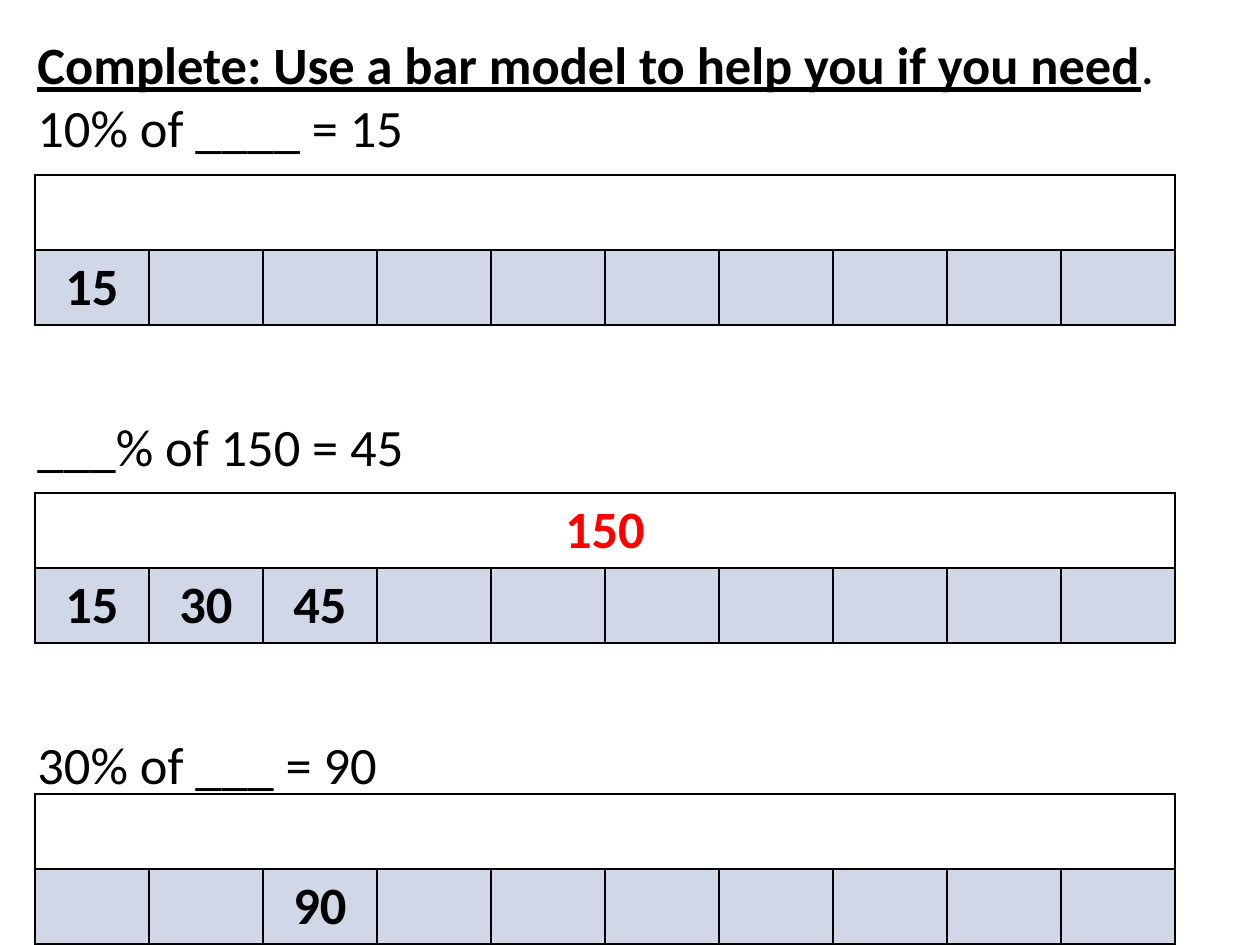
"""Build a worksheet slide of percentage questions with bar models."""
from lxml import etree
from pptx import Presentation
from pptx.dml.color import RGBColor
from pptx.enum.text import MSO_ANCHOR, PP_ALIGN
from pptx.oxml.ns import qn
from pptx.util import Emu, Pt

CENTER = PP_ALIGN.CENTER
MIDDLE = MSO_ANCHOR.MIDDLE
SCALE = 914400 / 126
PARTS = 10
COLUMN_WIDTH = 114
ROW_HEIGHT = 75
BORDER_WIDTH = Pt(1)


def px(length):
    return Emu(round(length * SCALE))


def add_run(paragraph, text, color="000000", **formats):
    run = paragraph.add_run()
    run.text = text
    run.font.color.rgb = RGBColor.from_string(color)
    for name, value in {"name": "Calibri", "size": Pt(30), **formats}.items():
        setattr(run.font, name, value)


presentation = Presentation()
presentation.slide_width = px(1260)
presentation.slide_height = px(945)
slide = presentation.slides.add_slide(presentation.slide_layouts[6])

questions = slide.shapes.add_textbox(px(25), px(26), px(1201), px(839))
text_frame = questions.text_frame
text_frame.word_wrap = True
heading = text_frame.paragraphs[0]
add_run(heading, "Complete: Use a bar model to help you if you need", bold=True, underline=True)
add_run(heading, ".")
for question, gap in (("10% of ____ = 15", 0), ("___% of 150 = 45", 146), ("30% of ___ = 90", 146)):
    paragraph = text_frame.add_paragraph()
    paragraph.space_before = Pt(gap)
    add_run(paragraph, question)

bar_models = [
    (175, "", ["15"]),
    (493, "150", ["15", "30", "45"]),
    (794, "", ["", "", "90"]),
]
for top, whole, parts in bar_models:
    frame = slide.shapes.add_table(
        2, PARTS, px(35), px(top), px(PARTS * COLUMN_WIDTH), px(2 * ROW_HEIGHT)
    )
    table = frame.table
    table.first_row = False
    table.horz_banding = False
    for column in table.columns:
        column.width = px(COLUMN_WIDTH)
    for row in table.rows:
        row.height = px(ROW_HEIGHT)
    table.cell(0, 0).merge(table.cell(0, PARTS - 1))

    rows = [([whole], "FFFFFF", "FF0000"), (parts, "D0D8E8", "000000")]
    for row, (values, fill, color) in zip(table.rows, rows):
        for index, cell in enumerate(row.cells):
            properties = cell._tc.get_or_add_tcPr()
            for side in ("a:lnL", "a:lnR", "a:lnT", "a:lnB"):
                line = etree.SubElement(properties, qn(side), w=str(BORDER_WIDTH))
                solid = etree.SubElement(line, qn("a:solidFill"))
                etree.SubElement(solid, qn("a:srgbClr"), val="000000")
            cell.fill.solid()
            cell.fill.fore_color.rgb = RGBColor.from_string(fill)
            cell.vertical_anchor = MIDDLE
            cell.margin_top = cell.margin_bottom = px(5)
            if index < len(values) and values[index]:
                paragraph = cell.text_frame.paragraphs[0]
                paragraph.alignment = CENTER
                add_run(paragraph, values[index], color, bold=True)

presentation.save("out.pptx")
